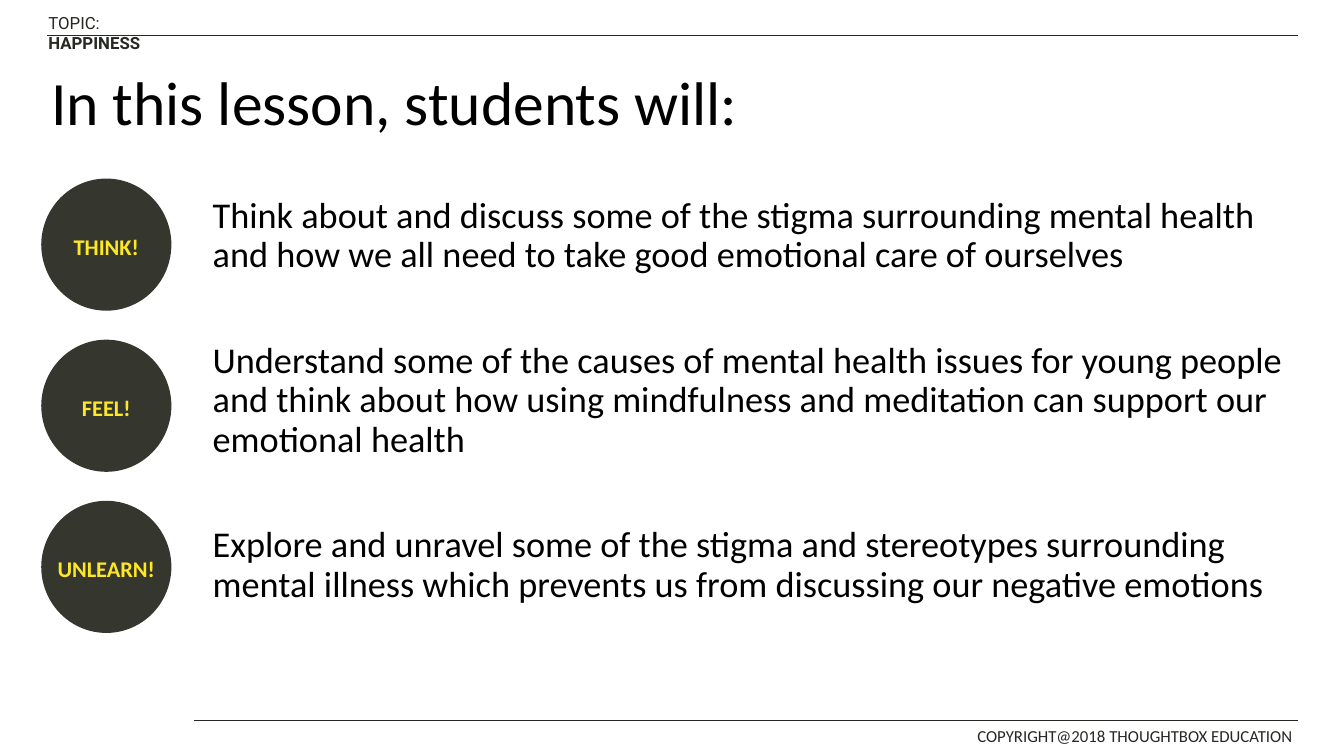
from lxml import etree
from pptx import Presentation
from pptx import util as u
from pptx.dml.color import RGBColor
from pptx.enum import shapes, text
from pptx.oxml.ns import qn

COLORS = {"ink": "252823", "text": "000000", "disc": "35372F", "label": "FEE725"}


class LessonSlide:
    """Holds the style and the current slide."""

    def __init__(self, prs, font="Calibri"):
        self.s = prs.slides.add_slide(prs.slide_layouts[6])
        self.font = font

    def color(self, name):
        return RGBColor.from_string(COLORS[name])

    def style(self, p, size, color, font=None, bold=None):
        p.font.name = font or self.font
        p.font.size = u.Pt(size)
        p.font.color.rgb = self.color(color)
        p.font.bold = bold

    def textbox(self, x, y, w, h, paragraphs, size, color="text", font=None,
                spacing=None, gap=0, anchor=text.MSO_ANCHOR.TOP):
        """Each paragraph is a list of (words, bold) runs."""
        sp = self.s.shapes.add_textbox(*map(u.Cm, (x, y, w, h)))
        tf = sp.text_frame
        tf.word_wrap = True
        tf.vertical_anchor = anchor
        for i, runs in enumerate(paragraphs):
            p = tf.add_paragraph() if i else tf.paragraphs[0]
            if i:
                p.space_before = u.Pt(gap)
            p.line_spacing = spacing
            self.style(p, size, color, font)
            for words, bold in runs:
                r = p.add_run()
                r.text = words
                if bold:
                    r.font.bold = True

    def rule(self, x1, x2, y):
        line = self.s.shapes.add_connector(
            shapes.MSO_CONNECTOR.STRAIGHT, *map(u.Cm, (x1, y, x2, y)))
        line.line.color.rgb = self.color("ink")
        line.line.width = u.Pt(1)
        etree.SubElement(line._element.spPr, qn("a:effectLst"))

    def disc(self, x, y, w, h, label):
        sp = self.s.shapes.add_shape(
            shapes.MSO_SHAPE.OVAL, *map(u.Cm, (x, y, w, h)))
        sp.shadow.inherit = False
        sp.fill.solid()
        sp.fill.fore_color.rgb = self.color("disc")
        sp.line.fill.background()
        tf = sp.text_frame
        tf.word_wrap = False
        tf.vertical_anchor = text.MSO_ANCHOR.MIDDLE
        p = tf.paragraphs[0]
        p.text = label
        p.alignment = text.PP_ALIGN.CENTER
        p.line_spacing = 1.15
        self.style(p, 16, "label", bold=True)


def main():
    prs = Presentation()
    prs.slide_width, prs.slide_height = u.Cm(33.87), u.Cm(19.05)
    slide = LessonSlide(prs)

    # Header and footer
    slide.textbox(0.97, 0.2, 3.86, 0.76, [[("TOPIC: ", False), ("HAPPINESS", True)]],
                  12, "ink", font="Roboto")
    slide.rule(1.19, 32.72, 0.89)
    slide.textbox(24.38, 18.16, 8.64, 0.79,
                  [[("COPYRIGHT@2018 THOUGHTBOX EDUCATION", False)]], 12, "ink")
    slide.rule(4.88, 32.72, 18.16)

    # Title
    slide.textbox(1.04, 0.81, 29.21, 3.68, [[("In this lesson, students will:", False)]],
                  44, spacing=0.9, anchor=text.MSO_ANCHOR.MIDDLE)

    # Lesson aims
    aims = [
        "Think about and discuss some of the stigma surrounding mental health "
        "and how we all need to take good emotional care of ourselves",
        "Understand some of the causes of mental health issues for young people "
        "and think about how using mindfulness and meditation can support our "
        "emotional health",
        "Explore and unravel some of the stigma and stereotypes surrounding "
        "mental illness which prevents us from discussing our negative emotions",
    ]
    slide.textbox(5.11, 4.85, 27.71, 12.09, [[(aim, False)] for aim in aims],
                  25.9, spacing=0.9, gap=47.6)

    # Labelled discs
    for i, label in enumerate(["THINK!", "FEEL!", "UNLEARN!"]):
        slide.disc(1.04, 4.5 + 4.06 * i, 3.28, 3.33, label)

    prs.save("out.pptx")


if __name__ == "__main__":
    main()
